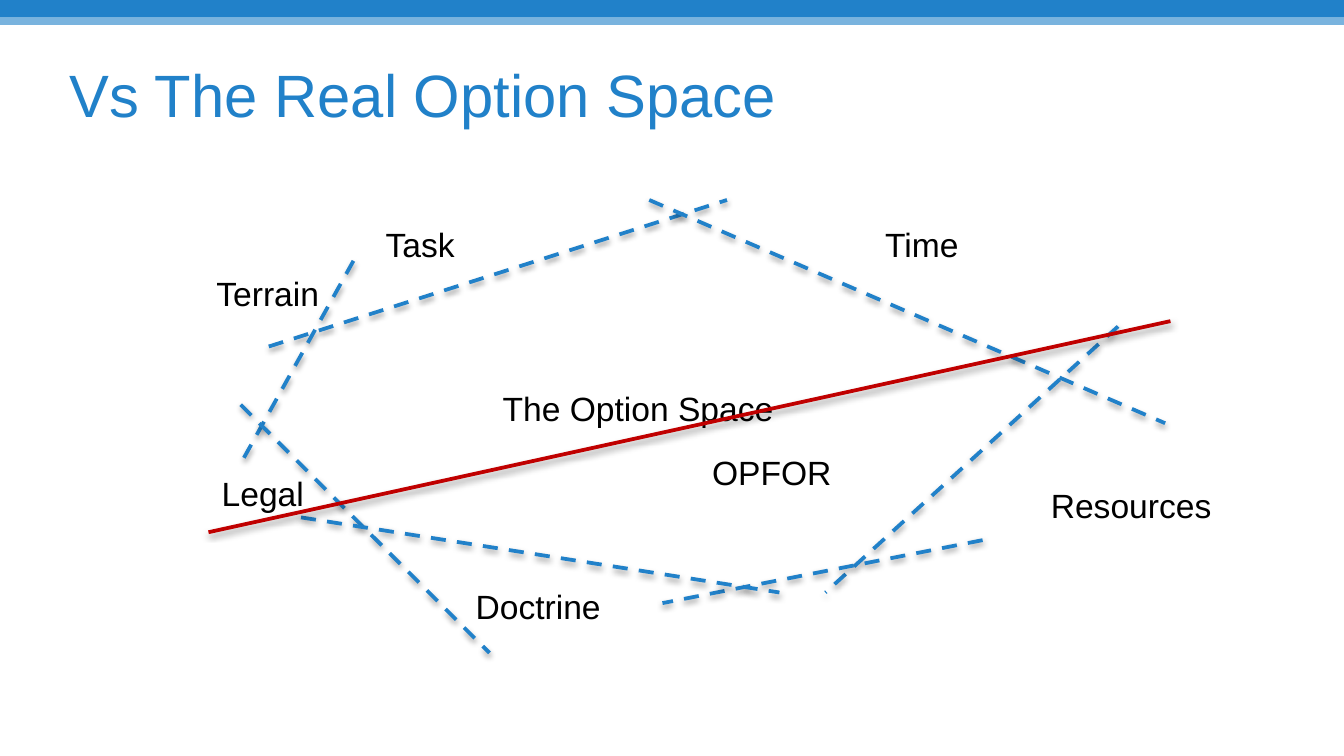
import pptx
import pptx.dml.color
import pptx.enum.dml
import pptx.enum.shapes
import pptx.enum.text
import pptx.oxml
import pptx.oxml.ns
import pptx.util
from dataclasses import dataclass

Cm = pptx.util.Cm


@dataclass(frozen=True)
class Theme:
    font: str = "Arial"
    blue: str = "2181C9"
    red: str = "C00000"
    black: str = "000000"
    title_size: int = 32
    label_size: int = 18
    line_width: int = 2


THEME = Theme()

SHADOW = (
    f'<a:effectLst {pptx.oxml.ns.nsdecls("a")}>'
    '<a:outerShdw blurRad="40000" dist="20000" dir="5400000" rotWithShape="0">'
    '<a:srgbClr val="000000"><a:alpha val="38000"/></a:srgbClr>'
    '</a:outerShdw></a:effectLst>'
)

# Limits of the option space: start x, y and end x, y in cm within the diagram
LIMITS = [
    (1.28, 2.85, 9.94, 0.08),
    (8.47, 0.08, 18.22, 4.3),
    (17.33, 2.47, 11.8, 7.5),
    (2.88, 1.23, 0.75, 5.06),
    (0.75, 3.95, 5.45, 8.64),
    (14.77, 6.51, 8.72, 7.7),
    (1.89, 6.08, 10.93, 7.5),
]
OPFOR_LINE = (18.32, 2.37, 0.14, 6.36)

# Labels: text, left, top and width in cm within the diagram
LABELS = [
    ("The Option Space", 5.45, 3.51, 5.69),
    ("Task", 3.24, 0.41, 1.83),
    ("Time", 12.68, 0.41, 1.91),
    ("Resources", 15.81, 5.34, 3.58),
    ("OPFOR", 9.41, 4.71, 2.79),
    ("Doctrine", 4.94, 7.25, 2.9),
    ("Legal", 0.14, 5.11, 2.08),
    ("Terrain", 0.04, 1.33, 2.46),
]
LABEL_HEIGHT = 1.02


def rgb(color):
    return pptx.dml.color.RGBColor.from_string(color)


def add_text(s, text, x, y, w, h, size, color, wrap):
    sp = s.shapes.add_textbox(Cm(x), Cm(y), Cm(w), Cm(h))
    tf = sp.text_frame
    tf.text = text
    tf.word_wrap = wrap
    font = tf.paragraphs[0].runs[0].font
    font.name = THEME.font
    font.size = pptx.util.Pt(size)
    font.color.rgb = rgb(color)
    return tf


def add_line(s, x1, y1, x2, y2, color, dash=None):
    sp = s.shapes.add_connector(
        pptx.enum.shapes.MSO_CONNECTOR.STRAIGHT, Cm(x1), Cm(y1), Cm(x2), Cm(y2))
    sp.line.color.rgb = rgb(color)
    sp.line.width = pptx.util.Pt(THEME.line_width)
    if dash:
        sp.line.dash_style = dash
    # Soft shadow below the line
    sp.element.spPr.append(pptx.oxml.parse_xml(SHADOW))


def add_banner(s, x, y, w, h):
    """Solid bar with a lighter strip below it."""
    bar_h = round(h * 0.7, 2)
    for top, height, alpha in ((y, bar_h, None), (y + bar_h, h - bar_h, 60000)):
        sp = s.shapes.add_shape(
            pptx.enum.shapes.MSO_SHAPE.RECTANGLE, Cm(x), Cm(top), Cm(w), Cm(height))
        sp.shadow.inherit = False
        sp.fill.solid()
        sp.fill.fore_color.rgb = rgb(THEME.blue)
        sp.line.fill.background()
        if alpha:
            clr = sp.element.spPr.find(".//" + pptx.oxml.ns.qn("a:srgbClr"))
            clr.append(pptx.oxml.parse_xml(
                f'<a:alpha {pptx.oxml.ns.nsdecls("a")} val="{alpha}"/>'))


def add_title(s, x, y, w, h):
    tf = add_text(s, "Vs The Real Option Space", x, y, w, h,
                  THEME.title_size, THEME.blue, True)
    tf.vertical_anchor = pptx.enum.text.MSO_ANCHOR.MIDDLE


def add_option_space(s, x, y):
    # Dashed limits
    for x1, y1, x2, y2 in LIMITS:
        add_line(s, x + x1, y + y1, x + x2, y + y2, THEME.blue,
                 pptx.enum.dml.MSO_LINE.DASH)
    # Labels
    for text, left, top, width in LABELS:
        tf = add_text(s, text, x + left, y + top, width, LABEL_HEIGHT,
                      THEME.label_size, THEME.black, False)
        tf.auto_size = pptx.enum.text.MSO_AUTO_SIZE.SHAPE_TO_FIT_TEXT
    # Opposing force cuts across the space
    x1, y1, x2, y2 = OPFOR_LINE
    add_line(s, x + x1, y + y1, x + x2, y + y2, THEME.red)


def main():
    prs = pptx.Presentation()
    prs.slide_width, prs.slide_height = Cm(25.4), Cm(14.29)
    s = prs.slides.add_slide(prs.slide_layouts[6])
    add_banner(s, 0, 0, 25.4, 0.47)
    add_title(s, 1.07, 0.58, 23.06, 2.39)
    add_option_space(s, 3.8, 3.7)
    prs.save("out.pptx")


if __name__ == "__main__":
    main()
